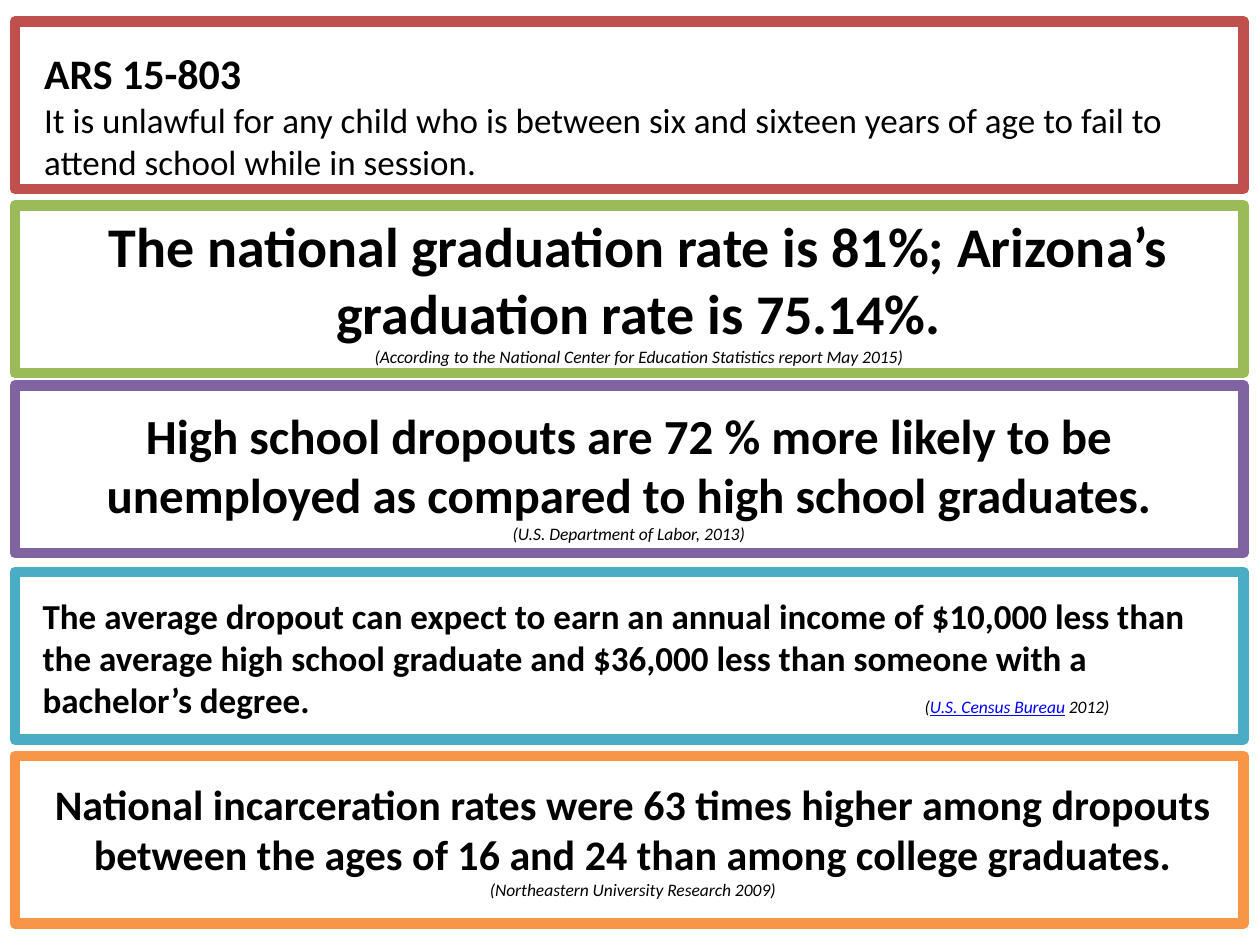
from dataclasses import dataclass

from lxml import etree
from pptx import Presentation
from pptx.dml.color import RGBColor
from pptx.enum.shapes import MSO_SHAPE
from pptx.enum.text import MSO_AUTO_SIZE, PP_ALIGN
from pptx.oxml.ns import qn
from pptx.slide import Slide
from pptx.text.text import _Paragraph
from pptx.util import Cm, Pt

RECTANGLE = MSO_SHAPE.RECTANGLE
GROW = MSO_AUTO_SIZE.SHAPE_TO_FIT_TEXT
LEFT = PP_ALIGN.LEFT
CENTER = PP_ALIGN.CENTER


@dataclass(frozen=True)
class Theme:
    font: str = "Calibri"
    text: str = "000000"
    link: str = "0000FF"
    panel: str = "FFFFFF"
    red: str = "C0504D"
    green: str = "9BBB59"
    purple: str = "8064A2"
    blue: str = "4BACC6"
    orange: str = "F79646"
    border: float = 6
    headline: float = 32
    statement: float = 28
    heading: float = 24
    body: float = 20
    source: float = 10


THEME = Theme()


@dataclass(frozen=True)
class Words:
    text: str
    size: float
    bold: bool = False
    italic: bool = False
    underline: bool = False
    color: str = THEME.text


@dataclass(frozen=True)
class Fact:
    border: str
    panel_top: float
    text_left: float
    text_top: float
    text_height: float
    paragraphs: list[list[Words]]
    alignment: PP_ALIGN = CENTER
    tab_stop: float | None = None


def strong(text: str, size: float) -> list[Words]:
    return [Words(text, size, bold=True)]


def source(text: str) -> list[Words]:
    return [Words(text, THEME.source, italic=True)]


SLIDE_WIDTH, SLIDE_HEIGHT = Cm(25.4), Cm(19.05)
PANEL_LEFT, PANEL_WIDTH, PANEL_HEIGHT = Cm(0.3), Cm(24.77), Cm(3.38)
TEXT_WIDTH = Cm(24.13)

FACTS = [
    Fact(THEME.red, 0.43, 0.64, 0.84, 3.0, [
        strong("ARS 15-803", THEME.heading),
        [Words("It is unlawful for any child who is between six and sixteen "
               "years of age to fail to attend school while in session.", THEME.body)],
    ], LEFT),
    Fact(THEME.green, 4.14, 0.81, 4.14, 3.43, [
        strong("The national graduation rate is 81%; Arizona’s graduation rate "
               "is 75.14%.", THEME.headline),
        source("(According to the National Center for Education Statistics report May 2015)"),
    ]),
    Fact(THEME.purple, 7.77, 0.61, 8.05, 3.07, [
        strong("High school dropouts are 72 % more likely to be unemployed as "
               "compared to high school graduates.", THEME.statement),
        source("(U.S. Department of Labor, 2013)"),
    ]),
    Fact(THEME.blue, 11.53, 0.61, 11.86, 2.82, [
        strong("The average dropout can expect to earn an annual income of $10,000 "
               "less than the average high school graduate and $36,000 less than "
               "someone with a bachelor’s degree.\t", THEME.body)
        + source("(")
        + [Words("U.S. Census Bureau", THEME.source, italic=True, underline=True,
                 color=THEME.link)]
        + source(" 2012)"),
    ], LEFT, 17.78),
    Fact(THEME.orange, 15.24, 0.69, 15.57, 2.74, [
        strong("National incarceration rates were 63 times higher among dropouts "
               "between the ages of 16 and 24 than among college graduates.",
               THEME.heading),
        source("(Northeastern University Research 2009)"),
    ]),
]


def draw_panel(slide: Slide, fact: Fact) -> None:
    shape = slide.shapes.add_shape(
        RECTANGLE, PANEL_LEFT, Cm(fact.panel_top), PANEL_WIDTH, PANEL_HEIGHT)
    shape.shadow.inherit = False
    shape.fill.solid()
    shape.fill.fore_color.rgb = RGBColor.from_string(THEME.panel)
    shape.line.color.rgb = RGBColor.from_string(fact.border)
    shape.line.width = Pt(THEME.border)


def add_words(paragraph: _Paragraph, words: Words) -> None:
    run = paragraph.add_run()
    run.text = words.text
    formats = {
        "name": THEME.font,
        "size": Pt(words.size),
        "bold": words.bold,
        "italic": words.italic,
        "underline": words.underline,
    }
    for name, value in formats.items():
        setattr(run.font, name, value)
    run.font.color.rgb = RGBColor.from_string(words.color)


def add_tab_stop(paragraph: _Paragraph, position: float) -> None:
    properties = paragraph._p.get_or_add_pPr()
    tabs = etree.SubElement(properties, qn("a:tabLst"))
    etree.SubElement(tabs, qn("a:tab"), pos=str(int(Cm(position))), algn="l")


def draw_text(slide: Slide, fact: Fact) -> None:
    shape = slide.shapes.add_textbox(
        Cm(fact.text_left), Cm(fact.text_top), TEXT_WIDTH, Cm(fact.text_height))
    frame = shape.text_frame
    frame.word_wrap = True
    frame.auto_size = GROW
    for index, line in enumerate(fact.paragraphs):
        paragraph = frame.add_paragraph() if index else frame.paragraphs[0]
        paragraph.alignment = fact.alignment
        if fact.tab_stop is not None:
            add_tab_stop(paragraph, fact.tab_stop)
        for words in line:
            add_words(paragraph, words)


def main() -> None:
    presentation = Presentation()
    presentation.slide_width = SLIDE_WIDTH
    presentation.slide_height = SLIDE_HEIGHT
    slide = presentation.slides.add_slide(presentation.slide_layouts.get_by_name("Blank"))
    for draw in (draw_panel, draw_text):
        for fact in FACTS:
            draw(slide, fact)
    presentation.save("out.pptx")


if __name__ == "__main__":
    main()
